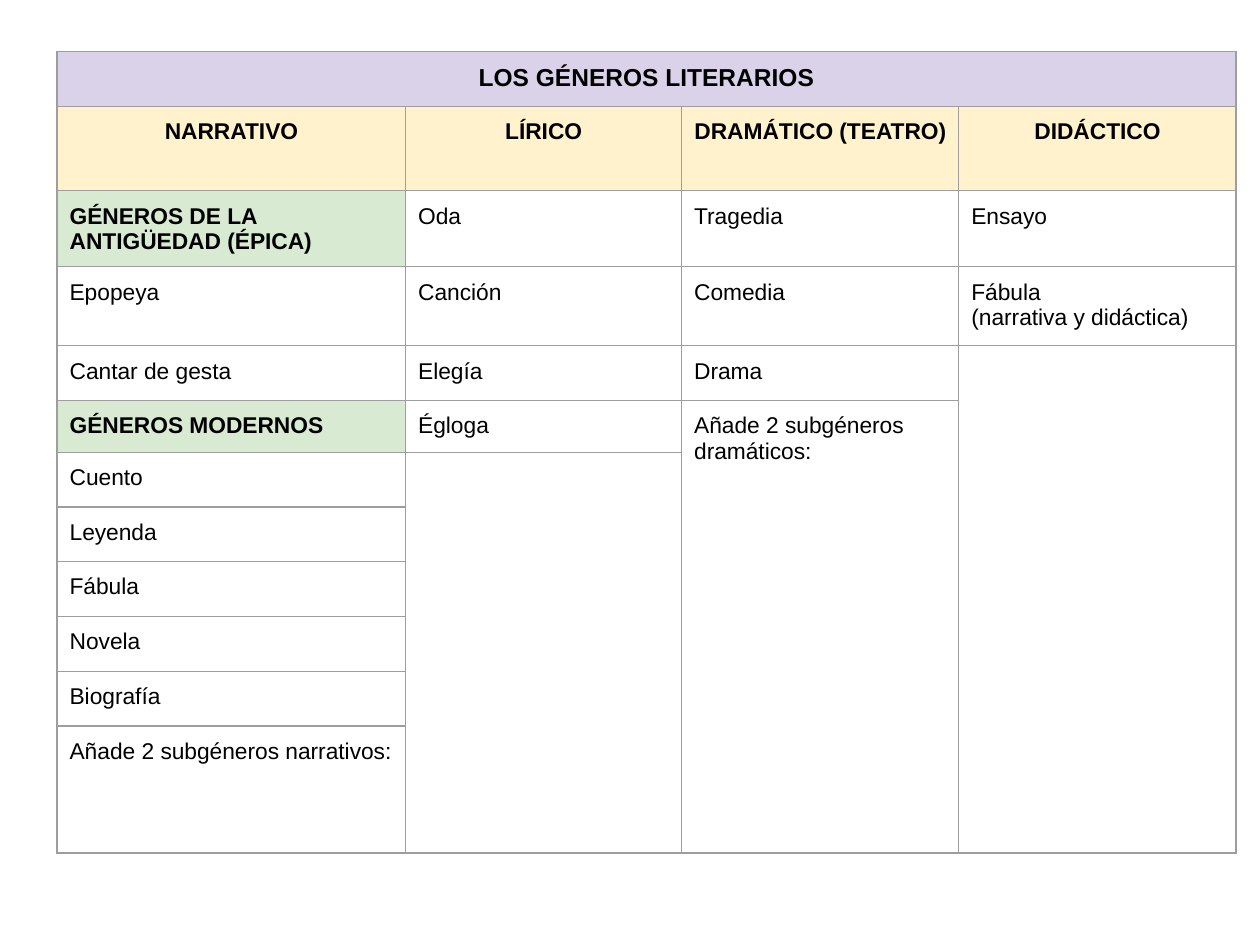
from lxml import etree
from pptx import Presentation
from pptx import util as u
from pptx.dml import color
from pptx.enum import text
from pptx.oxml import ns

COLORS = {
    "ink": "000000",
    "border": "9E9E9E",
    "title": "D9D2E9",
    "genre": "FFF2CC",
    "period": "D9EAD3",
}
GENRE_WIDTHS = [199.2, 157.7, 158.4, 158.4]
ROW_HEIGHTS = [31.5, 48.3, 43.4, 45.1, 31.3, 29.5] + [31.3] * 6 + [25.3, 16]
TITLE = "LOS GÉNEROS LITERARIOS"
PERIODS = ("GÉNEROS DE LA ANTIGÜEDAD (ÉPICA)", "GÉNEROS MODERNOS")
GENRES = {
    "NARRATIVO": [
        PERIODS[0], "Epopeya", "Cantar de gesta",
        PERIODS[1], "Cuento", "Leyenda", "Fábula", "Novela", "Biografía",
        "Añade 2 subgéneros narrativos:",
    ],
    "LÍRICO": ["Oda", "Canción", "Elegía", "Égloga", ""],
    "DRAMÁTICO (TEATRO)": [
        "Tragedia", "Comedia", "Drama", "Añade 2 subgéneros\ndramáticos:",
    ],
    "DIDÁCTICO": ["Ensayo", "Fábula\n(narrativa y didáctica)", ""],
}


def add_borders(cell):
    properties = cell._tc.get_or_add_tcPr()
    for position, side in enumerate(("lnL", "lnR", "lnT", "lnB")):
        edge = etree.Element(ns.qn(f"a:{side}"), w=str(u.Pt(0.75)))
        fill = etree.SubElement(edge, ns.qn("a:solidFill"))
        etree.SubElement(fill, ns.qn("a:srgbClr"), val=COLORS["border"])
        properties.insert(position, edge)


def style_cell(cell):
    cell.margin_left = cell.margin_right = u.Pt(7.2)
    cell.margin_top = cell.margin_bottom = u.Pt(7.2)
    cell.fill.background()
    add_borders(cell)


def write_cell(cell, wording, size=13, bold=False, centered=False, fill=None):
    if fill:
        cell.fill.solid()
        cell.fill.fore_color.rgb = color.RGBColor.from_string(COLORS[fill])
    if not wording:
        return
    frame = cell.text_frame
    for number, line in enumerate(wording.split("\n")):
        paragraph = frame.add_paragraph() if number else frame.paragraphs[0]
        paragraph.alignment = text.PP_ALIGN.CENTER if centered else text.PP_ALIGN.LEFT
        run = paragraph.add_run()
        run.text = line
        run.font.name = "Arial"
        run.font.size = u.Pt(size)
        run.font.bold = bold
        run.font.color.rgb = color.RGBColor.from_string(COLORS["ink"])


def add_grid(slide):
    frame = slide.shapes.add_table(
        len(ROW_HEIGHTS), len(GENRE_WIDTHS), u.Pt(32.6), u.Pt(29.3),
        u.Pt(sum(GENRE_WIDTHS)), u.Pt(sum(ROW_HEIGHTS)))
    grid = frame.table
    grid.first_row = grid.horz_banding = False
    for column, width in zip(grid.columns, GENRE_WIDTHS):
        column.width = u.Pt(width)
    for row, height in zip(grid.rows, ROW_HEIGHTS):
        row.height = u.Pt(height)
    for cell in grid.iter_cells():
        style_cell(cell)
    return grid


def fill_genre(grid, column, genre, subgenres):
    write_cell(grid.cell(1, column), genre, bold=True, centered=True, fill="genre")
    for row, subgenre in enumerate(subgenres, start=2):
        is_period = subgenre in PERIODS
        write_cell(grid.cell(row, column), subgenre, bold=is_period,
                   fill="period" if is_period else None)
    last_row = len(subgenres) + 1
    grid.cell(last_row, column).merge(grid.cell(len(ROW_HEIGHTS) - 1, column))


def main():
    deck = Presentation()
    deck.slide_width, deck.slide_height = u.Pt(720), u.Pt(540)
    slide = deck.slides.add_slide(deck.slide_layouts[6])
    grid = add_grid(slide)
    grid.cell(0, 0).merge(grid.cell(0, len(GENRE_WIDTHS) - 1))
    write_cell(grid.cell(0, 0), TITLE, size=14, bold=True, centered=True, fill="title")
    for column, (genre, subgenres) in enumerate(GENRES.items()):
        fill_genre(grid, column, genre, subgenres)
    deck.save("out.pptx")


if __name__ == "__main__":
    main()
